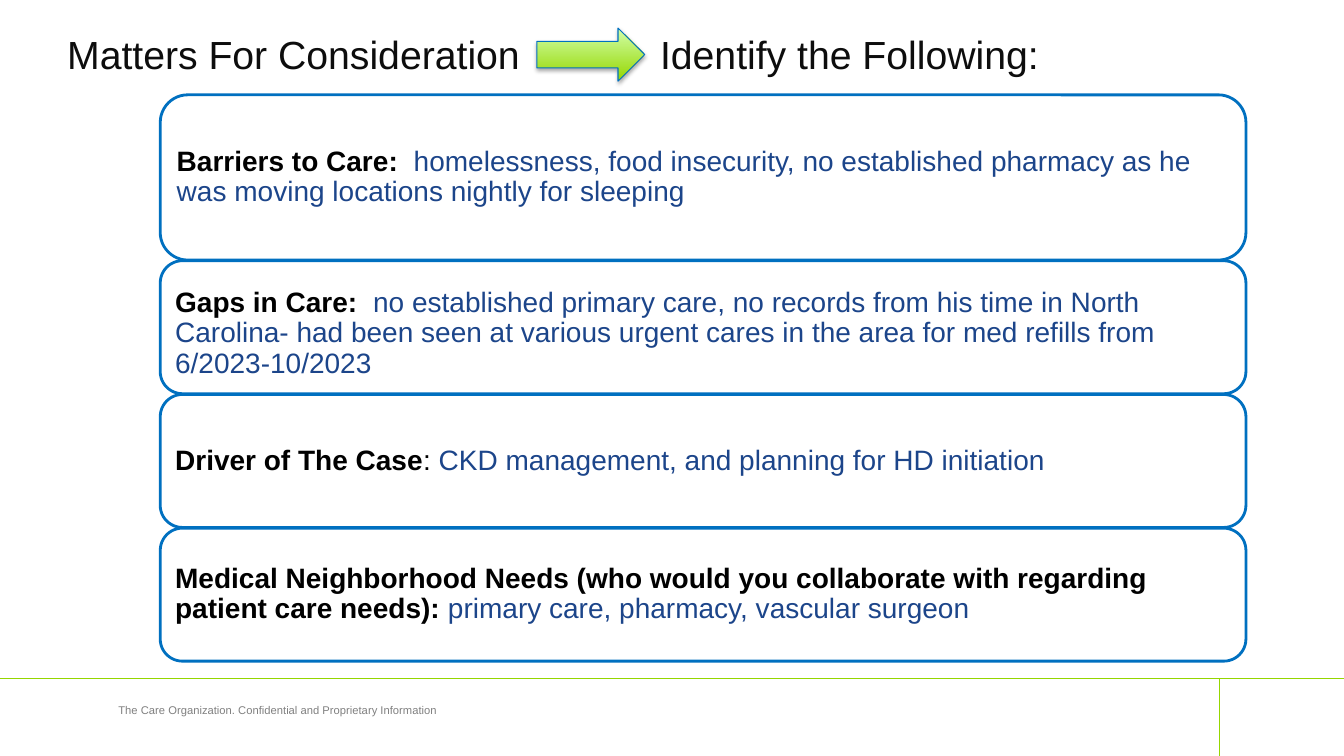
import pptx
import pptx.util
import pptx.dml.color
import pptx.enum.shapes
import pptx.enum.text
import pptx.oxml
from dataclasses import dataclass

Pt = pptx.util.Pt
Shape = pptx.enum.shapes.MSO_SHAPE
Anchor = pptx.enum.text.MSO_ANCHOR
Align = pptx.enum.text.PP_ALIGN
DRAWING = 'xmlns:a="http://schemas.openxmlformats.org/drawingml/2006/main"'


@dataclass(frozen=True)
class Theme:
    font: str = "Arial"
    title_size: int = 28
    body_size: int = 20
    footer_size: int = 8
    title: str = "0D0D0D"
    label: str = "000000"
    answer: str = "1C458A"
    footer: str = "808080"
    border: str = "0070C0"
    panel: str = "FFFFFF"
    green: str = "95D600"
    pale_green: str = "D2FFA9"


theme = Theme()


def color(code):
    return pptx.dml.color.RGBColor.from_string(code)


def add_span(para, text, size, code, bold=False):
    span = para.add_run()
    span.text = text
    span.font.name = theme.font
    span.font.size = Pt(size)
    span.font.bold = bold
    span.font.color.rgb = color(code)


deck = pptx.Presentation()
deck.slide_width, deck.slide_height = Pt(960), Pt(540)
page = deck.slides.add_slide(deck.slide_layouts[6])

# Footer rules
for start_x, start_y, end_x, end_y in [(871, 540, 871, 484.5), (0, 484.5, 960, 484.5)]:
    rule = page.shapes.add_connector(
        pptx.enum.shapes.MSO_CONNECTOR.STRAIGHT,
        Pt(start_x), Pt(start_y), Pt(end_x), Pt(end_y))
    rule.line.color.rgb = color(theme.green)
    rule.line.width = Pt(0.5)
    rule._element.spPr.append(pptx.oxml.parse_xml(f"<a:effectLst {DRAWING}/>"))

# Footer text
footer = page.shapes.add_textbox(Pt(30), Pt(498.5), Pt(337), Pt(30)).text_frame
footer.word_wrap = True
footer.paragraphs[0].alignment = Align.CENTER
add_span(footer.paragraphs[0],
         "The Care Organization. Confidential and Proprietary Information",
         theme.footer_size, theme.footer)

# Title, with a tab stop that leaves room for the arrow
title = page.shapes.add_textbox(Pt(48), Pt(20), Pt(738), Pt(37.5)).text_frame
title.word_wrap = True
title.vertical_anchor = Anchor.MIDDLE
title.margin_left = title.margin_right = title.margin_top = title.margin_bottom = 0
heading = title.paragraphs[0]
heading._p.get_or_add_pPr().append(pptx.oxml.parse_xml(
    f'<a:tabLst {DRAWING}><a:tab pos="{Pt(423.5)}" algn="l"/></a:tabLst>'))
add_span(heading, "Matters For Consideration\tIdentify the Following:",
         theme.title_size, theme.title)

# Title arrow
arrow = page.shapes.add_shape(Shape.RIGHT_ARROW, Pt(383.5), Pt(20), Pt(77), Pt(38))
arrow.fill.gradient()
arrow.fill.gradient_angle = 90
for stop, code in zip(arrow.fill.gradient_stops, (theme.green, theme.pale_green)):
    stop.color.rgb = color(code)
arrow.line.color.rgb = color(theme.border)
arrow.line.width = Pt(0.75)
arrow.shadow.inherit = False
arrow._element.spPr.find(pptx.oxml.ns.qn("a:effectLst")).append(pptx.oxml.parse_xml(
    f'<a:outerShdw {DRAWING} blurRad="{Pt(3.1)}" dist="{Pt(1.8)}" dir="5400000" '
    'rotWithShape="0"><a:srgbClr val="000000"><a:alpha val="35000"/></a:srgbClr>'
    '</a:outerShdw>'))

# Stacked panels: height, top inset, spans as (text, color, bold)
panels = [
    (118, 6, [
        ("Barriers to Care:  ", theme.label, True),
        ("homelessness, food insecurity, no established pharmacy as he was moving "
         "locations nightly for sleeping", theme.answer, False)]),
    (95, 15.5, [
        ("Gaps in Care:  ", theme.label, True),
        ("no established primary care, no records from his time in North Carolina- "
         "had been seen at various urgent cares in the area for med refills from "
         "6/2023-10/2023", theme.answer, False)]),
    (95, 6, [
        ("Driver of The Case", theme.label, True),
        (": ", theme.label, False),
        ("CKD management, and planning for HD initiation", theme.answer, False)]),
    (95, 6, [
        ("Medical Neighborhood Needs (who would you collaborate with regarding "
         "patient care needs): ", theme.label, True),
        ("primary care, pharmacy, vascular surgeon", theme.answer, False)]),
]
panel_gap = 0.5
top = 67.75
for height, top_inset, spans in panels:
    panel = page.shapes.add_shape(
        Shape.ROUNDED_RECTANGLE, Pt(114.5), Pt(top), Pt(775.5), Pt(height))
    panel.shadow.inherit = False
    panel.fill.solid()
    panel.fill.fore_color.rgb = color(theme.panel)
    panel.line.color.rgb = color(theme.border)
    panel.line.width = Pt(2)
    frame = panel.text_frame
    frame.word_wrap = True
    frame.vertical_anchor = Anchor.MIDDLE
    frame.margin_left = frame.margin_right = frame.margin_bottom = Pt(6)
    frame.margin_top = Pt(top_inset)
    para = frame.paragraphs[0]
    para.alignment = Align.LEFT
    para.line_spacing = 0.9
    for text, code, bold in spans:
        add_span(para, text, theme.body_size, code, bold)
    top += height + panel_gap

deck.save("out.pptx")
